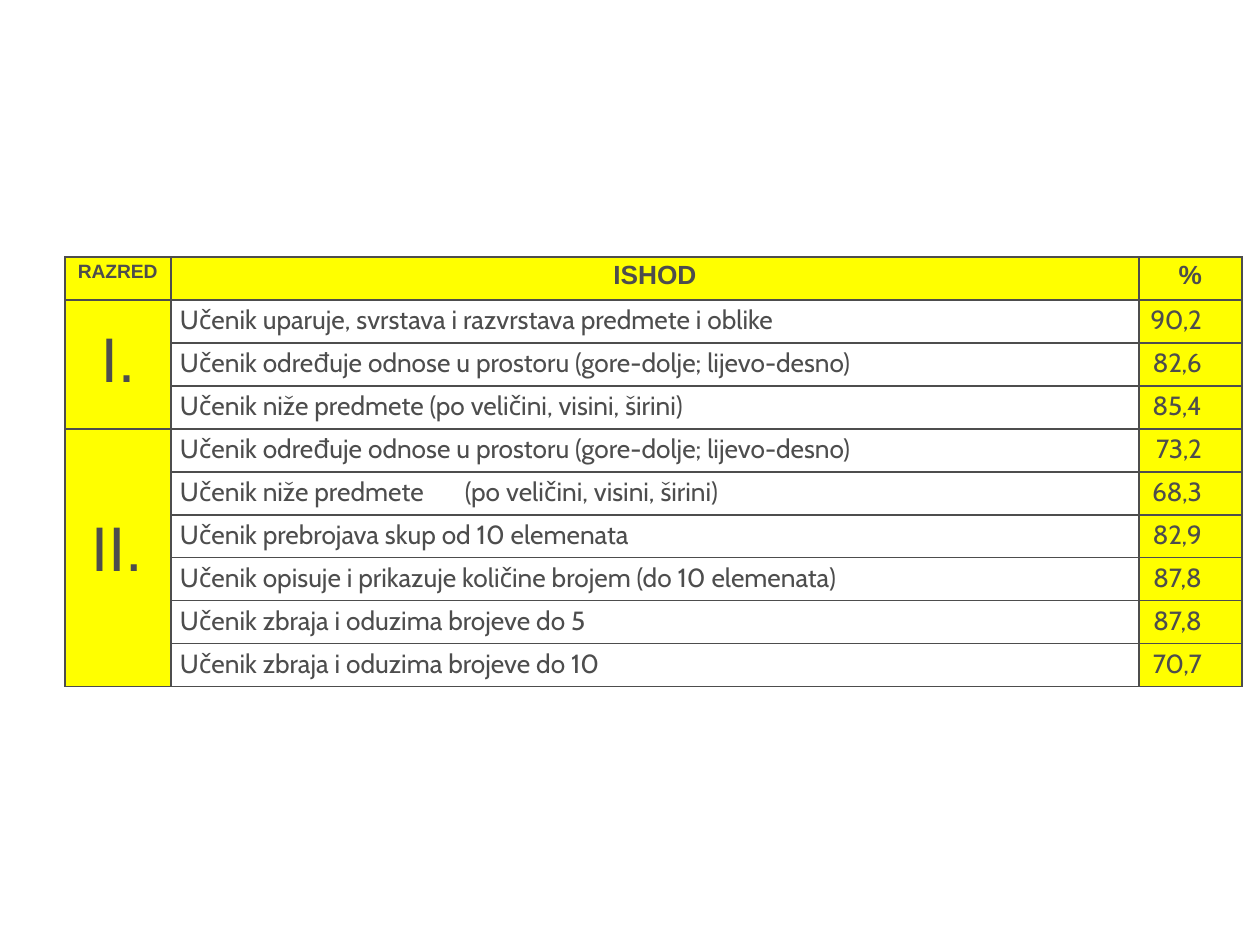
from dataclasses import dataclass

from lxml import etree
from pptx import Presentation
from pptx.dml.color import RGBColor
from pptx.enum.text import MSO_ANCHOR, PP_ALIGN
from pptx.oxml.ns import qn
from pptx.table import _Cell
from pptx.util import Emu, Pt

LEFT, MID, RIGHT = PP_ALIGN.LEFT, PP_ALIGN.CENTER, PP_ALIGN.RIGHT
TOP = MSO_ANCHOR.TOP
SCALE = 914400 // 126


@dataclass(frozen=True)
class Theme:
    ink: str = "4D4D4D"
    mark: str = "FFFF00"
    plain: str = "FFFFFF"
    head: str = "Arial"
    body: str = "Cabin"
    small: int = 11
    text: int = 15
    big: int = 36
    line: int = 1


@dataclass(frozen=True)
class Goal:
    text: str
    rate: str


@dataclass(frozen=True)
class Grade:
    name: str
    top: int
    left: int
    align: PP_ALIGN
    goals: tuple[Goal, ...]


THEME = Theme()
COLS = (106, 968, 103)
ROW = 43
PAD = 4
INDENT = 9
EDGE = 40
TAB = 285
GRADES = (
    Grade("I.", 25, 0, MID, (
        Goal("Učenik uparuje, svrstava i razvrstava predmete i oblike", "90,2"),
        Goal("Učenik određuje odnose u prostoru (gore-dolje; lijevo-desno)", "82,6"),
        Goal("Učenik niže predmete (po veličini, visini, širini)", "85,4"),
    )),
    Grade("II.", 86, 26, LEFT, (
        Goal("Učenik određuje odnose u prostoru (gore-dolje; lijevo-desno)", "73,2"),
        Goal("Učenik niže predmete\t(po veličini, visini, širini)", "68,3"),
        Goal("Učenik prebrojava skup od 10 elemenata", "82,9"),
        Goal("Učenik opisuje i prikazuje količine brojem (do 10 elemenata)", "87,8"),
        Goal("Učenik zbraja i oduzima brojeve do 5", "87,8"),
        Goal("Učenik zbraja i oduzima brojeve do 10", "70,7"),
    )),
)


def px(n: int) -> Emu:
    return Emu(n * SCALE)


def frame(cell: _Cell, fill: str) -> None:
    """Fill a cell and rule its four sides."""
    cell.fill.solid()
    cell.fill.fore_color.rgb = RGBColor.from_string(fill)
    props = cell._tc.get_or_add_tcPr()
    for i, side in enumerate(("a:lnL", "a:lnR", "a:lnT", "a:lnB")):
        line = etree.Element(qn(side), w=str(Pt(THEME.line)))
        paint = etree.SubElement(line, qn("a:solidFill"))
        etree.SubElement(paint, qn("a:srgbClr"), val=THEME.ink)
        props.insert(i, line)


def write(cell: _Cell, text: str, *, size: int = THEME.text,
          font: str = THEME.body, bold: bool = False, align: PP_ALIGN = LEFT,
          left: int = 0, right: int = 0, top: int = PAD,
          track: int = 0) -> None:
    """Put text in a cell; track is letter spacing in hundredths of a point."""
    cell.margin_left, cell.margin_right = px(left), px(right)
    cell.margin_top, cell.margin_bottom = px(top), 0
    cell.vertical_anchor = TOP
    para = cell.text_frame.paragraphs[0]
    para.alignment = align
    if "\t" in text:
        tabs = etree.SubElement(para._p.get_or_add_pPr(), qn("a:tabLst"))
        etree.SubElement(tabs, qn("a:tab"), pos=str(px(TAB)), algn="l")
    run = para.add_run()
    run.text = text
    face = run.font
    face.name, face.size, face.bold = font, Pt(size), bold
    face.color.rgb = RGBColor.from_string(THEME.ink)
    if track:
        run._r.get_or_add_rPr().set("spc", str(track))


def main() -> None:
    deck = Presentation()
    deck.slide_width, deck.slide_height = px(1260), px(945)
    slide = deck.slides.add_slide(deck.slide_layouts[6])
    count = 1 + sum(len(grade.goals) for grade in GRADES)
    table = slide.shapes.add_table(
        count, len(COLS), px(65), px(257), px(sum(COLS)), px(ROW * count)).table
    table.first_row = table.horz_banding = False
    for col, width in zip(table.columns, COLS):
        col.width = px(width)
    for row in table.rows:
        row.height = px(ROW)
        for cell, fill in zip(row.cells, (THEME.mark, THEME.plain, THEME.mark)):
            frame(cell, THEME.mark if row is table.rows[0] else fill)
    for cell in table.rows[0].cells:
        cell.fill.fore_color.rgb = RGBColor.from_string(THEME.mark)

    write(table.cell(0, 0), "RAZRED", size=THEME.small, font=THEME.head,
          bold=True, left=13, track=-10)
    write(table.cell(0, 1), "ISHOD", font=THEME.head, bold=True, align=MID)
    write(table.cell(0, 2), "%", font=THEME.head, bold=True, align=RIGHT,
          right=EDGE)

    start = 1
    for grade in GRADES:
        end = start + len(grade.goals)
        title = table.cell(start, 0)
        title.merge(table.cell(end - 1, 0))
        write(title, grade.name, size=THEME.big, font=THEME.head,
              align=grade.align, left=grade.left, top=grade.top, track=-20)
        for i, goal in enumerate(grade.goals, start):
            write(table.cell(i, 1), goal.text, left=INDENT)
            write(table.cell(i, 2), goal.rate, align=RIGHT, right=EDGE, track=-20)
        start = end
    deck.save("out.pptx")


if __name__ == "__main__":
    main()
